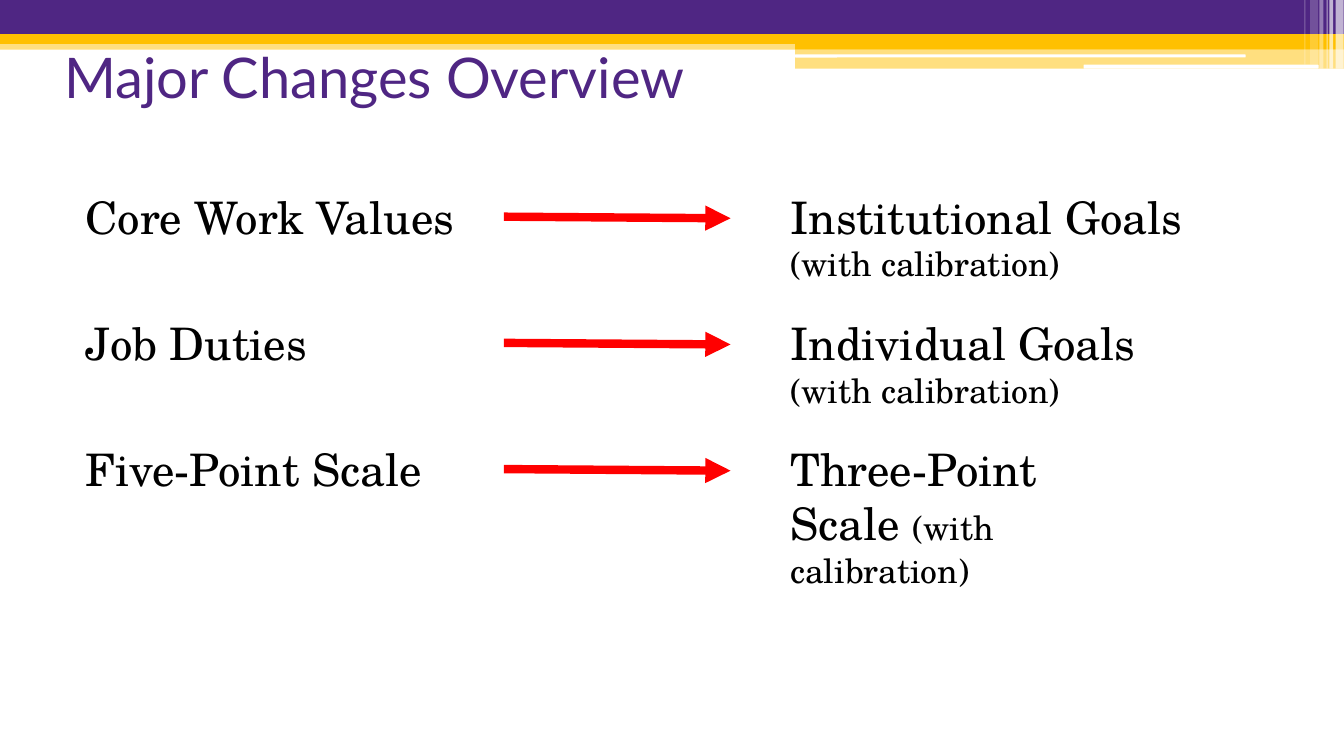
from dataclasses import dataclass

from lxml import etree
from pptx import Presentation
from pptx.dml.color import RGBColor
from pptx.enum.shapes import MSO_CONNECTOR, MSO_SHAPE
from pptx.enum.text import MSO_ANCHOR, MSO_AUTO_SIZE
from pptx.oxml.ns import qn
from pptx.util import Cm, Pt

RECTANGLE = MSO_SHAPE.RECTANGLE
ROUNDED = MSO_SHAPE.ROUNDED_RECTANGLE
STRAIGHT = MSO_CONNECTOR.STRAIGHT
TOP, MIDDLE = MSO_ANCHOR.TOP, MSO_ANCHOR.MIDDLE
GROW = MSO_AUTO_SIZE.SHAPE_TO_FIT_TEXT


@dataclass(frozen=True)
class Theme:
    purple: str = "4F2683"
    gold: str = "FFC000"
    white: str = "FFFFFF"
    black: str = "000000"
    red: str = "FF0000"
    title_font: str = "Lato"
    body_font: str = "TeX Gyre Schola"
    title_size: int = 40
    body_size: int = 32
    note_size: int = 24
    arrow_width: int = 6


THEME = Theme()
WIDTH, HEIGHT = 33.87, 19.05
NOTE = "(with calibration)"
# Old item, new item, width of the new item's box
CHANGES = [
    ("Core Work Values", "Institutional Goals ", 10.59),
    ("Job Duties", "Individual Goals ", 9.75),
    ("Five-Point Scale", "Three-Point Scale ", 9.75),
]


def add_block(page, box, color, opacity=100, kind=RECTANGLE):
    block = page.shapes.add_shape(kind, *map(Cm, box))
    block.shadow.inherit = False
    block.line.fill.background()
    block.fill.solid()
    block.fill.fore_color.rgb = RGBColor.from_string(color)
    if opacity < 100:
        tint = block.fill._xPr.find(f".//{qn('a:srgbClr')}")
        etree.SubElement(tint, qn("a:alpha")).set("val", str(opacity * 1000))


def add_text(page, box, spans, font, color, anchor=TOP):
    """Place one paragraph; spans are (text, size) pairs."""
    frame = page.shapes.add_textbox(*map(Cm, box)).text_frame
    frame.word_wrap = True
    frame.vertical_anchor = anchor
    if anchor == TOP:
        frame.auto_size = GROW
    para = frame.paragraphs[0]
    for text, size in spans:
        span = para.add_run()
        span.text = text
        span.font.name = font
        span.font.size = Pt(size)
        span.font.color.rgb = RGBColor.from_string(color)


def add_arrow(page, left, top, right, bottom):
    arrow = page.shapes.add_connector(STRAIGHT, *map(Cm, (left, top, right, bottom)))
    arrow.line.color.rgb = RGBColor.from_string(THEME.red)
    arrow.line.width = Pt(THEME.arrow_width)
    etree.SubElement(arrow.line._get_or_add_ln(), qn("a:tailEnd")).set("type", "triangle")
    etree.SubElement(arrow._element.spPr, qn("a:effectLst"))


def add_banner(page, left, top, width):
    right = left + width
    step = right - 13.83
    add_block(page, (left, top + 1.02, width, 0.23), THEME.gold, 50)
    add_block(page, (left, top, width, 0.86), THEME.purple)
    add_block(page, (left, top + 0.86, width, 0.25), THEME.gold)
    add_block(page, (step, top + 0.99, 13.83, 0.25), THEME.gold)
    add_block(page, (step, top + 1.22, 13.83, 0.51), THEME.gold, 50)
    add_block(page, (step, top + 1.37, 11.35, 0.08), THEME.white, kind=ROUNDED)
    add_block(page, (step + 7.27, top + 1.63, 5.92, 0.1), THEME.white, kind=ROUNDED)

    # Stripes: distance from the right edge, width, height, opacity
    for inset, stripe, height, opacity in [
        (0.21, 0.2, 1.73, 65),
        (0.37, 0.1, 1.73, 65),
        (0.44, 0.03, 1.73, 60),
        (0.62, 0.1, 1.73, 40),
        (0.85, 0.2, 1.63, 20),
        (1.0, 0.03, 1.63, 30),
    ]:
        add_block(page, (right - inset, top, stripe, height), THEME.white, opacity)


def add_title(page, box):
    spans = [("Major Changes Overview", THEME.title_size)]
    add_text(page, box, spans, THEME.title_font, THEME.purple, MIDDLE)


def add_changes(page, left, top, pitch):
    """Stack the rows, each an old item, an arrow and a new item."""
    for index, (old, new, new_width) in enumerate(CHANGES):
        row = top + index * pitch
        add_text(page, (left, row, 10.8, 1.63), [(old, THEME.body_size)],
                 THEME.body_font, THEME.black)
        add_text(page, (left + 17.77, row, new_width, 2.64),
                 [(new, THEME.body_size), (NOTE, THEME.note_size)],
                 THEME.body_font, THEME.black)
        add_arrow(page, left + 10.8, row + 0.81, left + 16.51, row + 0.85)


def main():
    deck = Presentation()
    deck.slide_width, deck.slide_height = Cm(WIDTH), Cm(HEIGHT)
    page = deck.slides.add_slide(deck.slide_layouts[6])
    add_banner(page, 0, 0, WIDTH)
    add_title(page, (1.37, 0.43, 30.48, 2.97))
    add_changes(page, 1.9, 4.65, 3.18)
    deck.save("out.pptx")


if __name__ == "__main__":
    main()
